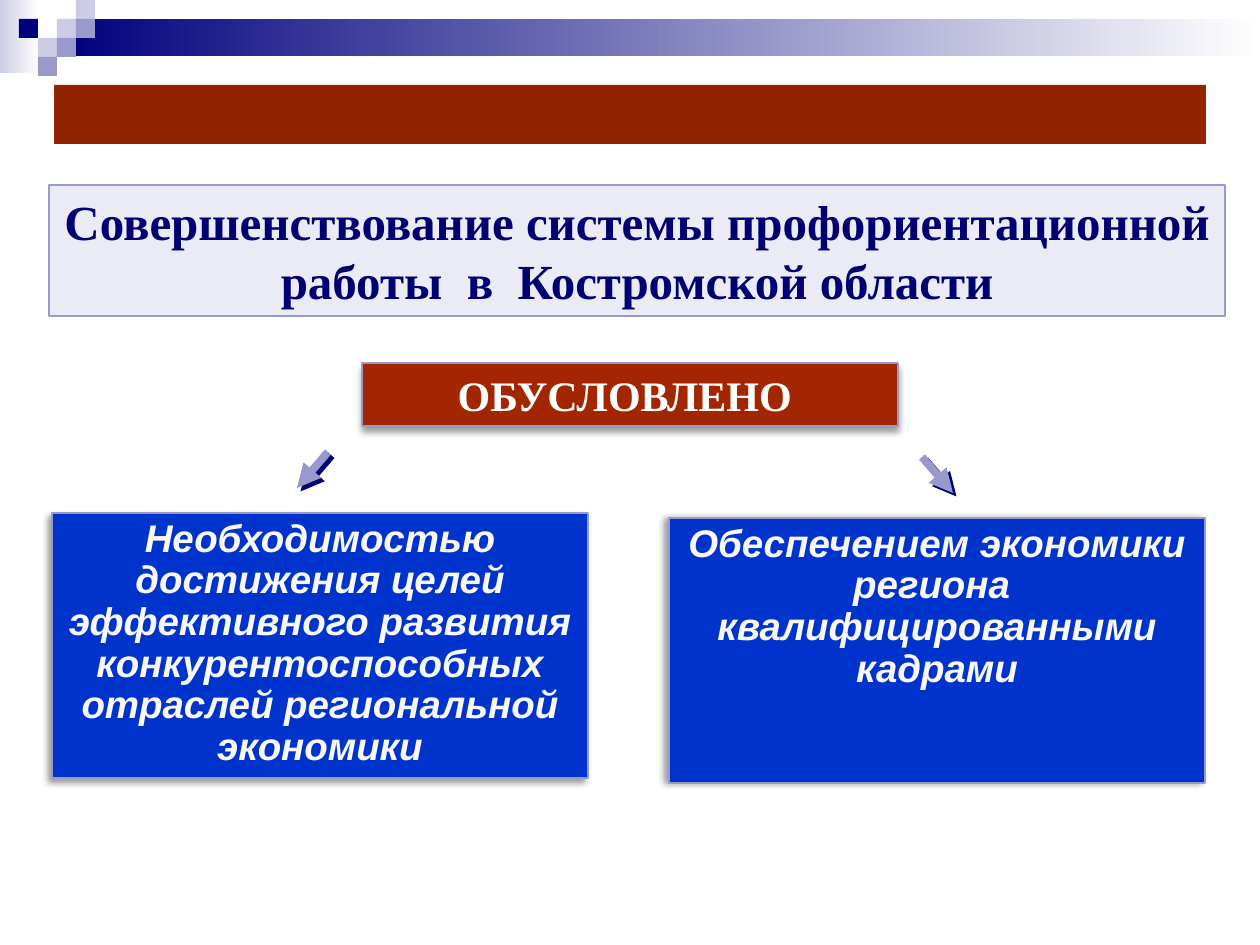
from lxml.etree import SubElement
from pptx import Presentation
from pptx.dml.color import RGBColor
from pptx.enum.shapes import MSO_CONNECTOR as CONN, MSO_SHAPE as SHAPE
from pptx.enum.text import MSO_ANCHOR as ANCHOR, PP_ALIGN as ALIGN
from pptx.oxml.ns import qn
from pptx.util import Emu, Pt

COLORS = {
    "navy": "00007D", "title": "000072", "lilac": "9999CC", "pale": "CCCCE6",
    "panel": "EBEBF5", "brick": "922300", "rust": "A22700", "blue": "0033CC",
    "snow": "F8F8F8", "white": "FFFFFF", "black": "000000",
}
TITLE = {"name": "Times New Roman", "size": Pt(28), "bold": True}
LABEL = {**TITLE, "size": Pt(24)}
REASON = {"name": "Arial", "size": Pt(22), "bold": True, "italic": True}
CELL = 19
SQUARES = [(3, 1, "pale"), (4, 0, "pale"), (4, 1, "lilac"), (2, 2, "pale"),
           (1, 1, "navy"), (3, 2, "lilac"), (2, 3, "lilac")]


def px(n):
    return Emu(round(n * 914400 / 126))


def rgb(name):
    return RGBColor.from_string(COLORS[name])


class Deck:
    def __init__(self, width, height):
        self.prs = Presentation()
        self.prs.slide_width, self.prs.slide_height = px(width), px(height)
        self.s = self.prs.slides.add_slide(self.prs.slide_layouts[6])

    def shadow(self, effects, color, alpha, blur, dist, angle):
        attrs = {"blurRad": Pt(blur), "dist": Pt(dist), "dir": angle * 60000,
                 "algn": "ctr", "rotWithShape": 0}
        shadow = SubElement(effects, qn("a:outerShdw"),
                            {k: str(int(v)) if k != "algn" else v for k, v in attrs.items()})
        clr = SubElement(shadow, qn("a:srgbClr"), val=COLORS[color])
        SubElement(clr, qn("a:alpha"), val=str(alpha * 1000))

    def rect(self, x, y, w, h, fill, line=None, shadow_angle=None):
        sp = self.s.shapes.add_shape(SHAPE.RECTANGLE, px(x), px(y), px(w), px(h))
        sp.shadow.inherit = False
        sp.fill.solid()
        sp.fill.fore_color.rgb = rgb(fill)
        if line:
            sp.line.color.rgb = rgb(line)
            sp.line.width = Pt(0.75)
        else:
            sp.line.fill.background()
        if shadow_angle is not None:
            effects = sp._element.spPr.find(qn("a:effectLst"))
            self.shadow(effects, "black", 40, 4, 3, shadow_angle)
        return sp

    def fade(self, x, y, w, h, start):
        sp = self.rect(x, y, w, h, start)
        sp.fill.gradient()
        sp.fill.gradient_angle = 0
        for stop, color, pos in zip(sp.fill.gradient_stops, (start, "white"), (0, 1)):
            stop.color.rgb = rgb(color)
            stop.position = pos

    def text_box(self, x, y, w, h, fill, text, color, font, spacing=1.0, shadow_angle=None):
        sp = self.rect(x, y, w, h, fill, "lilac", shadow_angle)
        tf = sp.text_frame
        tf.word_wrap = True
        tf.vertical_anchor = ANCHOR.TOP
        p = tf.paragraphs[0]
        p.alignment = ALIGN.CENTER
        p.line_spacing = spacing
        r = p.add_run()
        r.text = text
        r.font.color.rgb = rgb(color)
        for key, value in font.items():
            setattr(r.font, key, value)

    def arrow(self, x1, y1, x2, y2):
        sp = self.s.shapes.add_connector(CONN.STRAIGHT, px(x1), px(y1), px(x2), px(y2))
        sp.line.color.rgb = rgb("lilac")
        sp.line.width = Pt(4.5)
        SubElement(sp.line._get_or_add_ln(), qn("a:tailEnd"), type="triangle")
        effects = SubElement(sp._element.spPr, qn("a:effectLst"))
        self.shadow(effects, "navy", 100, 0, 2.8, 45)


def main():
    deck = Deck(1260, 945)
    deck.fade(0, 0, 39, 73, "pale")
    deck.fade(57, 19, 1203, 37, "navy")
    for col, row, color in SQUARES:
        deck.rect(col * CELL, row * CELL, CELL, CELL, color)

    deck.rect(54, 85, 1152, 59, "brick")
    deck.text_box(49, 185, 1176, 131, "panel",
                  "Совершенствование системы профориентационной работы  в  Костромской области",
                  "title", TITLE)
    deck.text_box(362, 363, 536, 63, "rust", "ОБУСЛОВЛЕНО ", "white", LABEL, shadow_angle=90)
    deck.arrow(328, 452, 297, 488)
    deck.arrow(922, 457, 953, 493)

    reasons = [
        (52, 513, 135, "Необходимостью достижения целей эффективного развития "
                       "конкурентоспособных отраслей региональной экономики"),
        (669, 518, 180, "Обеспечением экономики региона  квалифицированными кадрами"),
    ]
    for x, y, angle, text in reasons:
        deck.text_box(x, y, 536, 265, "blue", text, "snow", REASON, 0.9, angle)
    deck.prs.save("out.pptx")


if __name__ == "__main__":
    main()
